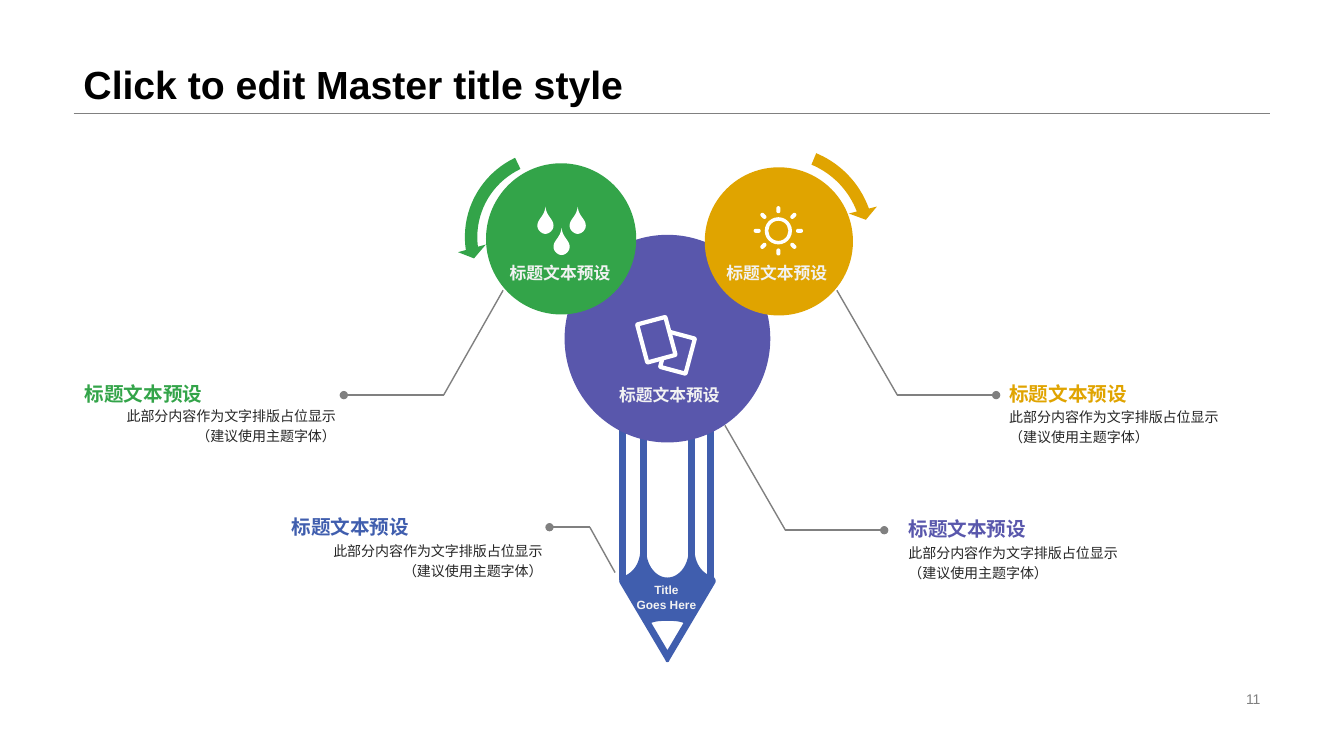
"""Builds a pencil infographic slide with three circles and four callouts."""
from lxml import etree
from math import cos, radians, sin
from pptx import Presentation
from pptx.dml.color import RGBColor
from pptx.enum.shapes import MSO_CONNECTOR, MSO_SHAPE
from pptx.enum.text import MSO_ANCHOR, PP_ALIGN
from pptx.oxml.ns import qn
from pptx.util import Inches, Pt

OVAL, DONUT, ROUNDED = MSO_SHAPE.OVAL, MSO_SHAPE.DONUT, MSO_SHAPE.ROUNDED_RECTANGLE
LEFT_ARC, RIGHT_ARC = MSO_SHAPE.LEFT_CIRCULAR_ARROW, MSO_SHAPE.CIRCULAR_ARROW
STRAIGHT = MSO_CONNECTOR.STRAIGHT
TOP, MIDDLE, BOTTOM = MSO_ANCHOR.TOP, MSO_ANCHOR.MIDDLE, MSO_ANCHOR.BOTTOM
LEFT, CENTER, RIGHT = PP_ALIGN.LEFT, PP_ALIGN.CENTER, PP_ALIGN.RIGHT

BLUE, PURPLE, GREEN, GOLD = "405EAE", "5957AC", "33A449", "E0A400"
GRAY, WHITE, PALE, DARK, BLACK = "808080", "FFFFFF", "F2F2F2", "262626", "000000"

HEADING = "标题文本预设"
DETAIL = "此部分内容作为文字排版占位显示\n（建议使用主题字体）"

SIDES = [(6.17, 4.13), (7.05, 4.13), (6.38, 3.99), (6.86, 3.99)]
SIDE_LENGTH = 1.62
CIRCLES = [
    ((5.6, 2.33, 2.04, 2.06), PURPLE),
    ((4.82, 1.62, 1.49, 1.5), GREEN),
    ((6.99, 1.66, 1.47, 1.47), GOLD),
]
ARROWS = [
    (LEFT_ARC, (4.53, 1.4, 1.91, 1.9), 357.1, GREEN,
     (0.065, 4.3, 104.891, 148.378, 0.075)),
    (RIGHT_ARC, (6.7, 1.37, 2.06, 2.05), 117.5, GOLD,
     (0.06, 3.941, 133.138, 105.082, 0.07)),
]
CAPTIONS = [
    ("Title\nGoes Here", (5.93, 5.67, 1.31, 0.51), 8.5, 0.05),
    (HEADING, (5.86, 3.82, 1.51, 0.2), 12, 0.05),
    (HEADING, (4.9, 2.61, 1.31, 0.2), 12, 0),
    (HEADING, (7.05, 2.61, 1.31, 0.2), 12, 0),
]
LEADERS = [
    [(4.99, 2.88), (4.4, 3.92), (3.41, 3.92)],
    [(8.3, 2.88), (8.9, 3.92), (9.88, 3.92)],
    [(7.19, 4.22), (7.79, 5.26), (8.77, 5.26)],
    [(6.1, 5.68), (5.85, 5.23), (5.45, 5.23)],
]
CALLOUTS = [
    (2.89, 5.11, 5.35, 2.49, BLUE, RIGHT),
    (0.84, 3.79, 4.01, 2.49, GREEN, RIGHT),
    (10.01, 3.79, 4.02, 2.54, GOLD, LEFT),
    (9.01, 5.13, 5.37, 2.54, PURPLE, LEFT),
]

# Left halves as steps from the axis: one point is a line, three are a curve.
TIP_AXIS = (6.62, 5.44)
TIP_EDGE = [
    [(0, 0.29)],
    [(-0.11, 0.29), (-0.2, 0.18), (-0.21, 0.04)],
    [(-0.21, 0.01), (-0.23, 0), (-0.24, 0)],
    [(-0.25, 0), (-0.27, 0.01), (-0.27, 0.04)],
    [(-0.28, 0.17), (-0.36, 0.26), (-0.45, 0.28)],
    [(-0.47, 0.29), (-0.49, 0.32), (-0.47, 0.35)],
    [(-0.02, 1.11)],
    [(-0.02, 1.12), (-0.01, 1.13), (0, 1.13)],
]
LEAD_EDGE = [[(0, 0.72)], [(-0.05, 0.72), (-0.11, 0.72), (-0.16, 0.74)], [(0, 1.01)]]
DROP_EDGE = [
    [(0, 0)],
    [(-0.01, 0.1), (-0.08, 0.12), (-0.08, 0.19)],
    [(-0.08, 0.23), (-0.04, 0.27), (0, 0.27)],
]
DROPS = [(5.41, 2.05), (5.73, 2.05), (5.57, 2.26)]
CARDS = [((6.72, 3.5), (0.26, 0.36), 15), ((6.51, 3.37), (0.29, 0.39), -15)]
SUN, SUN_SIZE, RAY_REACH, RAY_SIZE = (7.72, 2.29), 0.27, 0.21, (0.07, 0.04)

deck = Presentation()
deck.slide_width, deck.slide_height = Inches(13.33), Inches(7.5)
page = deck.slides.add_slide(deck.slide_layouts[6])


def color(value):
    return RGBColor.from_string(value)


def paint(shape, fill, line=None, width=0):
    shape.shadow.inherit = False
    shape.fill.solid()
    shape.fill.fore_color.rgb = color(fill)
    if line:
        shape.line.color.rgb = color(line)
        shape.line.width = Pt(width)
    else:
        shape.line.fill.background()


def add_shape(kind, frame, fill, turn=0, adjust=(), **outline):
    shape = page.shapes.add_shape(kind, *map(Inches, frame))
    shape.rotation = turn
    for index, value in enumerate(adjust):
        shape.adjustments[index] = value
    paint(shape, fill, **outline)


def centered(center, size):
    return (center[0] - size[0] / 2, center[1] - size[1] / 2, *size)


def add_line(start, end, shade, width, dot=False):
    line = page.shapes.add_connector(STRAIGHT, *map(Inches, (*start, *end)))
    line.line.color.rgb = color(shade)
    line.line.width = Pt(width)
    properties = line._element.spPr
    if dot:
        etree.SubElement(properties.get_or_add_ln(), qn("a:tailEnd"), type="oval")
    etree.SubElement(properties, qn("a:effectLst"))


def add_text(text, frame, size, shade, bold=False, align=LEFT, anchor=TOP,
             insets=(0, 0, 0, 0), spacing=1.0):
    box = page.shapes.add_textbox(*map(Inches, frame)).text_frame
    box.word_wrap, box.vertical_anchor = True, anchor
    for side, inset in zip(("left", "top", "right", "bottom"), insets):
        setattr(box, f"margin_{side}", Inches(inset))
    para = box.paragraphs[0]
    para.text, para.alignment, para.line_spacing = text, align, spacing
    formats = {"name": "Arial", "size": Pt(size), "bold": bold}
    for span in para.runs:
        for name, value in formats.items():
            setattr(span.font, name, value)
        span.font.color.rgb = color(shade)


def bezier(points, t):
    weights = ((1 - t) ** 3, 3 * t * (1 - t) ** 2, 3 * t * t * (1 - t), t ** 3)
    return tuple(sum(w * p[axis] for w, p in zip(weights, points)) for axis in (0, 1))


def mirrored(edge, origin, steps=12):
    half = []
    for step in edge:
        if len(step) == 1:
            half += step
        else:
            curve = [half[-1], *step]
            half += [bezier(curve, i / steps) for i in range(1, steps + 1)]
    outline = half + [(-x, y) for x, y in reversed(half)]
    return [(Inches(origin[0] + x), Inches(origin[1] + y)) for x, y in outline]


def add_outlines(outlines, fill):
    builder = page.shapes.build_freeform(*outlines[0][0], scale=1.0)
    builder.add_line_segments(outlines[0][1:])
    for outline in outlines[1:]:
        builder.move_to(*outline[0])
        builder.add_line_segments(outline[1:])
    paint(builder.convert_to_shape(), fill)


add_line((0.73, 1.12), (12.6, 1.12), GRAY, 0.25)
add_text("Click to edit Master title style", (0.73, 0, 11.87, 1.12), 28, BLACK, True,
         anchor=BOTTOM, insets=(0.1, 0.05, 0.1, 0.05), spacing=0.9)
add_text("11", (9.42, 6.82, 3.18, 0.23), 10, GRAY, align=RIGHT, anchor=MIDDLE,
         insets=(0.1, 0.05, 0.1, 0.05))

for x, y in SIDES:
    add_line((x, y), (x, y + SIDE_LENGTH), BLUE, 5)
add_outlines([mirrored(edge, TIP_AXIS) for edge in (TIP_EDGE, LEAD_EDGE)], BLUE)
for frame, fill in CIRCLES:
    add_shape(OVAL, frame, fill)
for kind, frame, turn, fill, adjust in ARROWS:
    add_shape(kind, frame, fill, turn, adjust)

add_outlines([mirrored(DROP_EDGE, tip) for tip in DROPS], WHITE)
add_shape(DONUT, centered(SUN, (SUN_SIZE, SUN_SIZE)), WHITE, adjust=[0.13])
for angle in range(0, 360, 45):
    center = (SUN[0] + RAY_REACH * cos(radians(angle)),
              SUN[1] + RAY_REACH * sin(radians(angle)))
    add_shape(ROUNDED, centered(center, RAY_SIZE), WHITE, angle, [0.5])
for center, size, turn in CARDS:
    add_shape(ROUNDED, centered(center, size), PURPLE, turn, [0.03], line=WHITE, width=3)

for text, frame, size, inset in CAPTIONS:
    add_text(text, frame, size, PALE, True, CENTER, MIDDLE, (inset, 0, 0, 0))
for start, bend, end in LEADERS:
    add_line(start, bend, GRAY, 1)
    add_line(bend, end, GRAY, 1, dot=True)
for left, heading_top, detail_top, width, shade, align in CALLOUTS:
    add_text(HEADING, (left, heading_top, width, 0.24), 14, shade, True)
    add_text(DETAIL, (left, detail_top, width, 0.5), 10, DARK, align=align, spacing=1.2)

deck.save("out.pptx")
